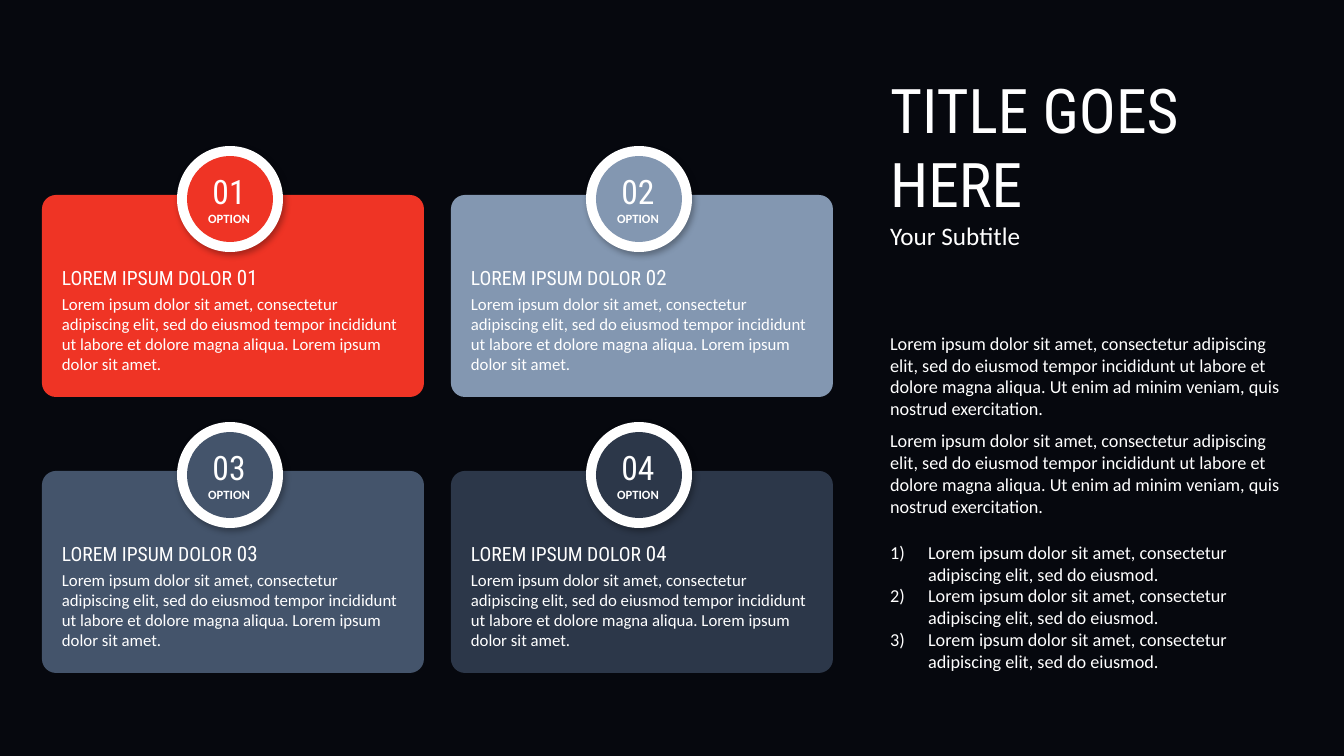
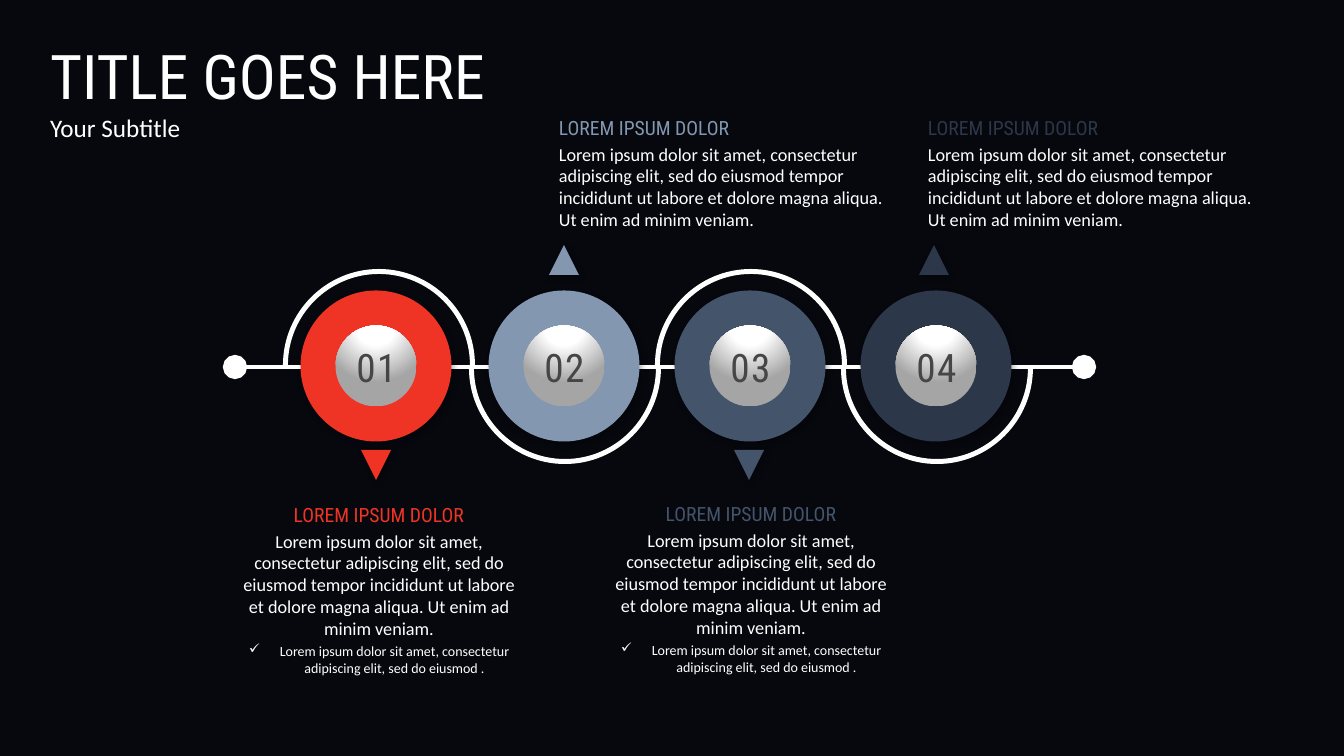
from lxml.etree import SubElement
from pptx import Presentation
from pptx.dml.color import RGBColor
from pptx.enum.shapes import MSO_CONNECTOR, MSO_SHAPE
from pptx.enum.text import MSO_ANCHOR, MSO_AUTO_SIZE, PP_ALIGN
from pptx.oxml import parse_xml
from pptx.oxml.ns import nsdecls, qn
from pptx.util import Emu, Pt

COLORS = {
    "background": "222A49", "white": "FFFFFF", "black": "000000", "number": "464646",
    "silver": "A5A5A5", "red": "EF3425", "steel": "8397B1", "slate": "44546B", "navy": "2C3749",
}
HEADING_FONT, BODY_FONT = "Roboto Condensed", "Calibri"
TITLE, SUBTITLE = "TITLE GOES HERE", "Your Subtitle"
HEADING = "LOREM IPSUM DOLOR"
LOREM = "Lorem ipsum dolor sit amet, consectetur adipiscing elit, sed do eiusmod"
TEMPOR = LOREM + " tempor incididunt ut labore et dolore magna aliqua."
CARD_TEXT = TEMPOR + " Lorem ipsum dolor sit amet."
INTRO_TEXT = TEMPOR + " Ut enim ad minim veniam, quis nostrud exercitation."
STEP_TEXT = TEMPOR + " Ut enim ad minim veniam."
CHECK_TEXT = LOREM + " ."
NUMBERED = [LOREM + "."] * 3
CARDS = [("01", "red"), ("02", "steel"), ("03", "slate"), ("04", "navy")]
STEPS = [
    ("01", "red", 376, "below", 361, (233, 498)),
    ("02", "steel", 564, "above", 549, (549, 111)),
    ("03", "slate", 750, "below", 734, (605, 497)),
    ("04", "navy", 936, "above", 919, (918, 111)),
]
WIDTH, HEIGHT = 1344, 756


def px(value):
    return Emu(round(value * 914400 / 100.8))


def place(shape, left, top, width, height):
    shape.left, shape.top, shape.width, shape.height = map(px, (left, top, width, height))


def color(name):
    return RGBColor.from_string(COLORS[name])


def add_text(frame, text, size=13, font=BODY_FONT, fill="white", bold=False,
             align=PP_ALIGN.LEFT, before=0, bullet=None, hang=0, spacing=0, new=True):
    paragraph = frame.paragraphs[-1]
    if new:
        first = not paragraph.runs
        if not first:
            paragraph = frame.add_paragraph()
        paragraph.alignment = align
        paragraph.space_before = Pt(0 if first else before)
        properties = paragraph._p.get_or_add_pPr()
        properties.set("marL", str(px(hang)))
        properties.set("indent", str(px(-hang)))
        if bullet == "number":
            SubElement(properties, qn("a:buAutoNum"), type="arabicParenR")
        elif bullet:
            SubElement(properties, qn("a:buChar"), char=bullet)
        else:
            SubElement(properties, qn("a:buNone"))
    run = paragraph.add_run()
    run.text = text
    run.font.size, run.font.name, run.font.bold = Pt(size), font, bold
    run.font.color.rgb = color(fill)
    if spacing:
        run._r.get_or_add_rPr().set("spc", str(spacing * 100))


def add_box(slide, *area):
    box = slide.shapes.add_textbox(0, 0, 0, 0)
    place(box, *area)
    box.text_frame.word_wrap = True
    return box.text_frame


def open_placeholder(shape, *area):
    place(shape, *area)
    frame = shape.text_frame
    frame.word_wrap = True
    frame.auto_size = MSO_AUTO_SIZE.NONE
    frame.vertical_anchor = MSO_ANCHOR.TOP
    return frame


def add_title(slide, *area):
    frame = open_placeholder(slide.shapes.title, *area)
    add_text(frame, TITLE, size=44, font=HEADING_FONT)
    add_text(frame, SUBTITLE, size=18)


def finish(shape, fill=None, shadow=False):
    if fill:
        shape.fill.solid()
        shape.fill.fore_color.rgb = color(fill)
    shape.line.fill.background()
    shape.shadow.inherit = False
    if shadow:
        effects = shape._element.spPr.find(qn("a:effectLst"))
        outer = SubElement(effects, qn("a:outerShdw"), blurRad=str(Pt(4.5)), dist=str(Pt(2.6)),
                           dir=str(53 * 60000), algn="tl", rotWithShape="0")
        tint = SubElement(outer, qn("a:srgbClr"), val=COLORS["black"])
        SubElement(tint, qn("a:alpha"), val="30000")


def add_shape(slide, kind, area, fill=None, shadow=False):
    shape = slide.shapes.add_shape(kind, 0, 0, 0, 0)
    place(shape, *area)
    finish(shape, fill, shadow)
    return shape


def add_circle(slide, center_x, center_y, size, fill=None, shadow=False):
    area = center_x - size / 2, center_y - size / 2, size, size
    return add_shape(slide, MSO_SHAPE.OVAL, area, fill, shadow)


def set_backdrop(presentation, slide):
    master = presentation.slide_master
    master.background.fill.solid()
    master.background.fill.fore_color.rgb = color("background")
    veil = add_shape(slide, MSO_SHAPE.RECTANGLE, (0, 0, WIDTH, HEIGHT), "black")
    tint = veil._element.spPr.find(qn("a:solidFill")).find(qn("a:srgbClr"))
    SubElement(tint, qn("a:alpha"), val="80000")
    master.shapes._spTree.insert(2, veil._element)


def add_card(slide, left, top, number, fill):
    width, height, radius = 382, 202, 14
    card = add_shape(slide, MSO_SHAPE.ROUNDED_RECTANGLE, (left, top, width, height), fill)
    card.adjustments[0] = radius / height
    badge = left + 188, top + 4
    add_circle(slide, *badge, 106, "white", shadow=True)
    add_circle(slide, *badge, 86, fill)
    frame = add_box(slide, left + 154, top - 29, 66, 66)
    add_text(frame, number, size=24, font=HEADING_FONT, align=PP_ALIGN.CENTER)
    add_text(frame, "OPTION", size=9, bold=True, align=PP_ALIGN.CENTER)
    frame = add_box(slide, left + 10, top + 65, 361, 122)
    add_text(frame, HEADING + " ", size=14, font=HEADING_FONT)
    add_text(frame, number, size=15, font=HEADING_FONT, new=False)
    add_text(frame, CARD_TEXT, size=12, before=2.4)


def add_ring(slide, center_x, center_y, direction):
    outer, inner, leg = 96, 91, 2

    def half(radius, side):
        bend = radius * 0.55
        segments = [
            [(-radius, leg)], [(-radius, 0)],
            [(-radius, -bend), (-bend, -radius), (0, -radius)],
            [(bend, -radius), (radius, -bend), (radius, 0)],
            [(radius, leg)],
        ]
        return [[(px(center_x + side * x), px(center_y + direction * y)) for x, y in segment]
                for segment in segments]

    start, *segments = half(outer, 1) + half(inner, -1)
    builder = slide.shapes.build_freeform(*start[0])
    builder.add_line_segments([point for segment in segments for point in segment], close=True)
    ring = builder.convert_to_shape()
    lines = iter(list(ring._element.iter(qn("a:lnTo"))))
    for segment in segments:
        line = next(lines)
        if len(segment) == 3:
            curve = line.makeelement(qn("a:cubicBezTo"))
            line.addprevious(curve)
            for part in (line, next(lines), next(lines)):
                curve.append(part[0])
                part.getparent().remove(part)
    finish(ring, "white")


def add_axis(slide, left, right, y):
    line = slide.shapes.add_connector(MSO_CONNECTOR.STRAIGHT, px(left), px(y), px(right), px(y))
    line.line.color.rgb = color("white")
    line.line.width = Pt(3.5)
    for end in ("a:headEnd", "a:tailEnd"):
        SubElement(line.line._get_or_add_ln(), qn(end), type="oval", w="lg", len="lg")
    SubElement(line._element.spPr, qn("a:effectLst"))


def add_ball(slide, center_x, center_y, number):
    ball = add_circle(slide, center_x, center_y, 81)
    stops = "".join(f'<a:gs pos="{position * 1000}"><a:srgbClr val="{COLORS[name]}"/></a:gs>'
                    for position, name in ((0, "white"), (35, "white"), (100, "silver")))
    ball._element.spPr.insert(2, parse_xml(
        f'<a:gradFill {nsdecls("a")} rotWithShape="1"><a:gsLst>{stops}</a:gsLst>'
        '<a:path path="circle"><a:fillToRect l="50000" t="-80000" r="50000" b="180000"/>'
        '</a:path></a:gradFill>'))
    frame = add_box(slide, center_x - 27, center_y - 26, 55, 54)
    frame.margin_left = frame.margin_right = px(7)
    frame.margin_top = frame.margin_bottom = px(3)
    add_text(frame, number, size=28, font=HEADING_FONT, fill="number",
             align=PP_ALIGN.CENTER, spacing=1)


def add_step(slide, number, fill, center_x, side, pointer_left, text_at):
    center_y, below = 366, side == "below"
    add_circle(slide, center_x, center_y, 151, fill, shadow=True)
    add_ball(slide, center_x, center_y, number)
    area = pointer_left, 450 if below else 245, 30, 30
    pointer = add_shape(slide, MSO_SHAPE.ISOSCELES_TRIANGLE, area, fill, shadow=True)
    pointer.rotation = 180 if below else 0
    frame = add_box(slide, *text_at, *((292, 184) if below else (346, 129)))
    align = PP_ALIGN.CENTER if below else PP_ALIGN.LEFT
    add_text(frame, HEADING, size=14, font=HEADING_FONT, fill=fill, align=align)
    add_text(frame, STEP_TEXT, align=align, before=2.4)
    if below:
        add_text(frame, CHECK_TEXT, size=10, align=align, before=2.4, bullet="✓", hang=31)


def build_options(presentation):
    slide = presentation.slides.add_slide(presentation.slide_layouts[1])
    set_backdrop(presentation, slide)
    for index, (number, fill) in enumerate(CARDS):
        row, column = divmod(index, 2)
        add_card(slide, 42 + 409 * column, 195 + 276 * row, number, fill)
    add_title(slide, 880, 67, 346, 190)
    frame = open_placeholder(slide.placeholders[1], 880, 327, 413, 353)
    add_text(frame, INTRO_TEXT)
    add_text(frame, INTRO_TEXT, before=7.3)
    for index, item in enumerate(NUMBERED):
        add_text(frame, item, before=0 if index else 17, bullet="number", hang=38)


def build_timeline(presentation):
    slide = presentation.slides.add_slide(presentation.slide_layouts[5])
    add_title(slide, 40, 33, 655, 115)
    for index in range(len(STEPS)):
        direction = -1 if index % 2 else 1
        add_ring(slide, 379 + 186 * index, 366.5 - 1.5 * direction, direction)
    add_axis(slide, 235, 1084, 367)
    for step in STEPS:
        add_step(slide, *step)


def main():
    presentation = Presentation()
    presentation.slide_width, presentation.slide_height = px(WIDTH), px(HEIGHT)
    build_options(presentation)
    build_timeline(presentation)
    presentation.save("out.pptx")


if __name__ == "__main__":
    main()
